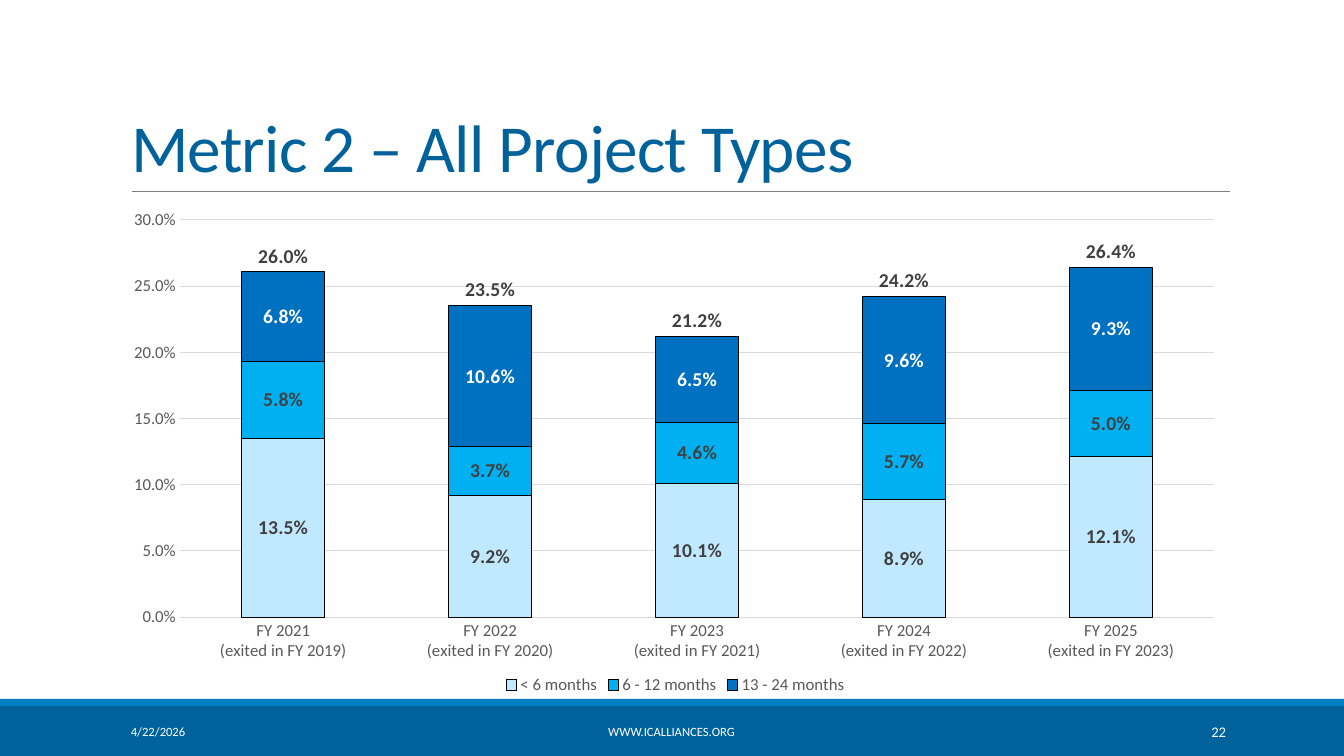
from lxml.etree import SubElement
from pptx import Presentation
from pptx.chart.data import CategoryChartData
from pptx.dml.color import RGBColor
from pptx.enum.chart import XL_CHART_TYPE, XL_LABEL_POSITION, XL_LEGEND_POSITION, XL_MARKER_STYLE, XL_TICK_MARK
from pptx.enum.shapes import MSO_CONNECTOR, MSO_SHAPE
from pptx.enum.text import MSO_ANCHOR, MSO_AUTO_SIZE, PP_ALIGN
from pptx.oxml import parse_xml
from pptx.oxml.ns import nsdecls, qn
from pptx.util import Pt

FONT = "Calibri"
COLORS = {
    "navy": "00629B", "stripe": "007EC4", "rule": "808080", "grid": "D9D9D9",
    "axis": "595959", "label": "404040", "white": "FFFFFF", "black": "000000",
    "pale": "C0E9FF", "sky": "00B0F0", "blue": "0070C0",
}
CATEGORIES = [f"FY {year}\n(exited in FY {year - 2})" for year in range(2021, 2026)]
SERIES = [
    ("< 6 months", (0.135, 0.092, 0.101, 0.089, 0.121), "pale", "label"),
    ("6 - 12 months", (0.058, 0.037, 0.046, 0.057, 0.05), "sky", "label"),
    ("13 - 24 months", (0.068, 0.106, 0.065, 0.096, 0.093), "blue", "white"),
]
TOTALS = (0.26, 0.235, 0.212, 0.242, 0.264)
PLOT_LAYOUT = {"x": 0.053, "y": 0.057, "w": 0.933, "h": 0.782}
FOOTERS = [
    ("4/22/2026", 121, 272, 9, PP_ALIGN.LEFT),
    ("WWW.ICALLIANCES.ORG", 406, 531, 9, PP_ALIGN.CENTER),
    ("22", 1092, 144, 10.5, PP_ALIGN.RIGHT),
]


def px(n):
    return round(n * 914400 / 100.8)


def rgb(name):
    return RGBColor.from_string(COLORS[name])


def set_font(font, size, color, bold=False):
    font.name, font.size, font.bold = FONT, Pt(size), bold
    font.color.rgb = rgb(color)


def set_line(line, color, width):
    line.color.rgb = rgb(color)
    line.width = Pt(width)


def write_text(tf, text, size=9, color="white", align=PP_ALIGN.LEFT,
               anchor=MSO_ANCHOR.MIDDLE, leading=None, spacing=None):
    tf.word_wrap, tf.auto_size, tf.vertical_anchor = True, MSO_AUTO_SIZE.NONE, anchor
    p = tf.paragraphs[0]
    p.alignment, p.line_spacing = align, leading
    r = p.add_run()
    r.text = text
    set_font(r.font, size, color)
    if spacing is not None:
        r._r.get_or_add_rPr().set("spc", str(spacing))


class Deck:
    """Hold the slide style and the slide being built."""

    def __init__(self):
        self.prs = Presentation()
        self.prs.slide_width, self.prs.slide_height = px(1344), px(756)
        self.s = self.prs.slides.add_slide(self.prs.slide_layouts[5])

    def band(self, x, y, w, h, color):
        sp = self.s.shapes.add_shape(MSO_SHAPE.RECTANGLE, px(x), px(y), px(w), px(h))
        sp.shadow.inherit = False
        sp.fill.solid()
        sp.fill.fore_color.rgb = rgb(color)
        sp.line.fill.background()

    def rule(self, x1, x2, y):
        sp = self.s.shapes.add_connector(MSO_CONNECTOR.STRAIGHT, px(x1), px(y), px(x2), px(y))
        set_line(sp.line, "rule", 0.5)
        SubElement(sp._element.spPr, qn("a:effectLst"))

    def title(self, text, x, y, w, h):
        sp = self.s.shapes.title
        sp.left, sp.top, sp.width, sp.height = px(x), px(y), px(w), px(h)
        write_text(sp.text_frame, text, size=48, color="navy",
                   anchor=MSO_ANCHOR.BOTTOM, leading=0.85, spacing=-50)

    def text(self, text, x, y, w, h, **style):
        sp = self.s.shapes.add_textbox(px(x), px(y), px(w), px(h))
        write_text(sp.text_frame, text, **style)

    def chart(self, x, y, w, h):
        data = CategoryChartData(number_format="0.0%")
        data.categories = CATEGORIES
        for name, values, *_ in SERIES:
            data.add_series(name, values)
        data.add_series("Total", TOTALS)
        chart = self.s.shapes.add_chart(
            XL_CHART_TYPE.COLUMN_STACKED, px(x), px(y), px(w), px(h), data).chart
        chart.has_title = False
        set_font(chart.font, 10, "black")
        self.axes(chart)
        self.legend(chart)
        self.totals(chart)
        bars = chart.plots[0]
        bars.gap_width, bars.overlap, bars.vary_by_categories = 150, 100, False
        for ser, (_, _, fill, label) in zip(bars.series, SERIES):
            ser.format.fill.solid()
            ser.format.fill.fore_color.rgb = rgb(fill)
            set_line(ser.format.line, "black", 0.75)
            self.labels(ser, label, XL_LABEL_POSITION.CENTER)
        self.plot_layout(chart)

    def axes(self, chart):
        cat, val = chart.category_axis, chart.value_axis
        for axis in (cat, val):
            axis.major_tick_mark = axis.minor_tick_mark = XL_TICK_MARK.NONE
            set_font(axis.tick_labels.font, 12, "axis")
        set_line(cat.format.line, "grid", 0.75)
        val.format.line.fill.background()
        val.minimum_scale, val.maximum_scale, val.major_unit = 0, 0.3, 0.05
        val.tick_labels.number_format = "0.0%"
        val.tick_labels.number_format_is_linked = False
        set_line(val.major_gridlines.format.line, "grid", 0.75)

    def legend(self, chart):
        chart.has_legend = True
        legend = chart.legend
        legend.position = XL_LEGEND_POSITION.BOTTOM
        legend.include_in_layout = False
        set_font(legend.font, 12, "axis")
        entry = parse_xml(
            f'<c:legendEntry {nsdecls("c")}><c:idx val="{len(SERIES)}"/>'
            '<c:delete val="1"/></c:legendEntry>')
        has_position = legend._element.find(qn("c:legendPos")) is not None
        legend._element.insert(int(has_position), entry)

    def labels(self, ser, color, position):
        labels = ser.data_labels
        labels.show_value = True
        labels.number_format, labels.number_format_is_linked = "0.0%", False
        labels.position = position
        set_font(labels.font, 14, color, bold=True)

    def totals(self, chart):
        bars = chart._chartSpace.find(".//" + qn("c:barChart"))
        ser = bars.findall(qn("c:ser"))[-1]
        for flag in ser.findall(qn("c:invertIfNegative")):
            ser.remove(flag)
        ids = "".join(f'<c:axId val="{a.get("val")}"/>' for a in bars.findall(qn("c:axId")))
        line = parse_xml(
            f'<c:lineChart {nsdecls("c")}><c:grouping val="standard"/>'
            f'<c:varyColors val="0"/><c:marker val="1"/>{ids}</c:lineChart>')
        line.insert(2, ser)
        bars.addnext(line)
        total = chart.plots[1].series[0]
        total.smooth = False
        total.format.line.fill.background()
        total.marker.style = XL_MARKER_STYLE.NONE
        self.labels(total, "label", XL_LABEL_POSITION.ABOVE)

    def plot_layout(self, chart):
        area = chart._chartSpace.find(".//" + qn("c:plotArea"))
        for old in area.findall(qn("c:layout")):
            area.remove(old)
        modes = '<c:xMode val="edge"/><c:yMode val="edge"/>'
        sizes = "".join(f'<c:{k} val="{v}"/>' for k, v in PLOT_LAYOUT.items())
        area.insert(0, parse_xml(
            f'<c:layout {nsdecls("c")}><c:manualLayout><c:layoutTarget val="inner"/>'
            f'{modes}{sizes}</c:manualLayout></c:layout>'))


def main():
    deck = Deck()
    deck.band(0, 706, 1344, 50, "navy")
    deck.band(0, 699, 1344, 7, "stripe")
    deck.rule(132, 1230, 191)
    deck.title("Metric 2 – All Project Types", 121, 31, 1109, 160)
    deck.chart(121, 191, 1109, 508)
    for text, x, w, size, align in FOOTERS:
        deck.text(text, x, 712, w, 40, size=size, align=align)
    deck.prs.save("out.pptx")


if __name__ == "__main__":
    main()
